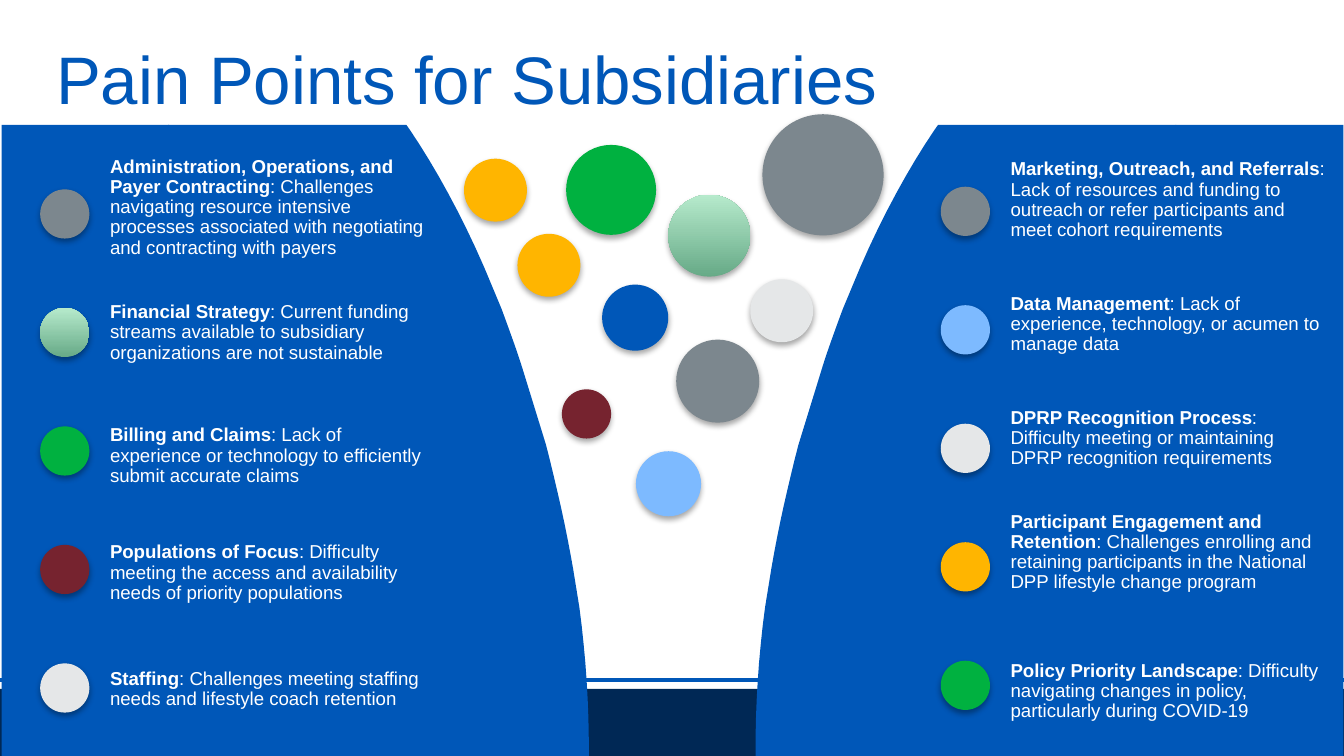
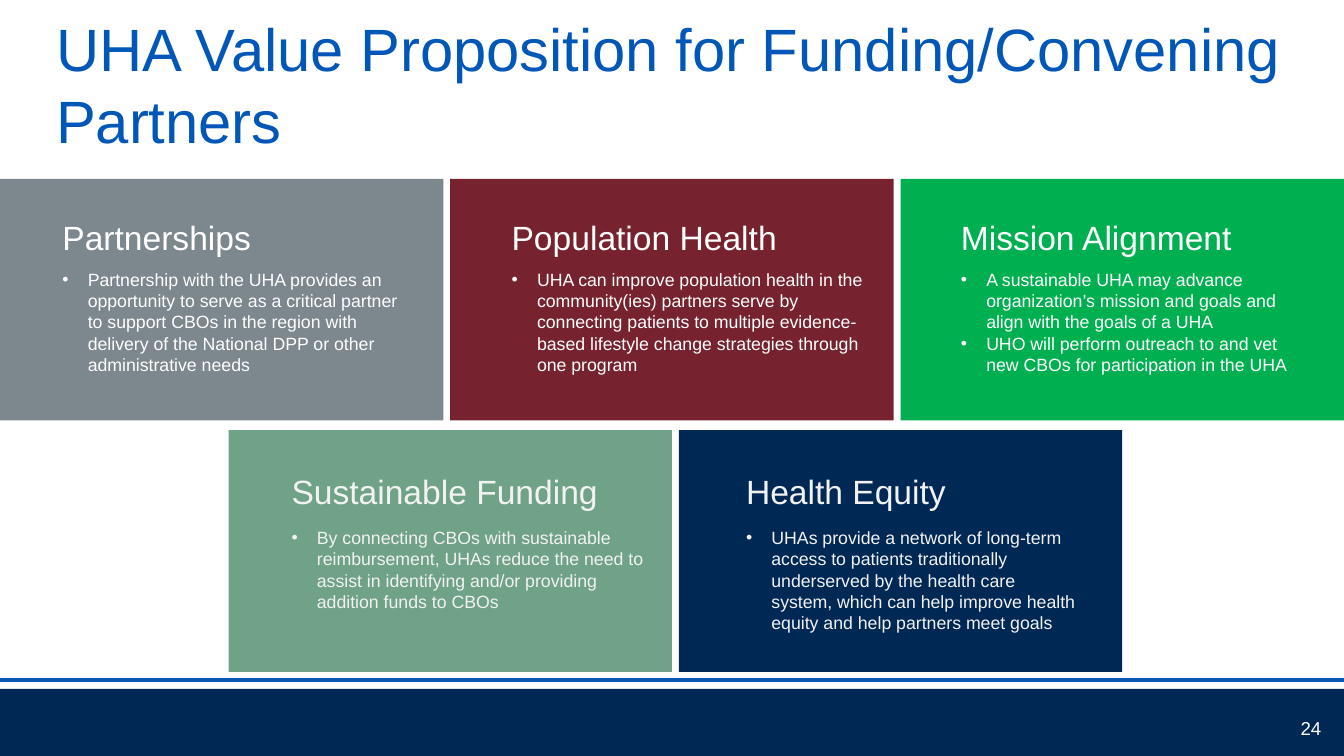
"""Build two slides: a funnel of pain points and a grid of value cards."""
from dataclasses import dataclass

from lxml import etree
from pptx import Presentation
from pptx import util as u
from pptx.dml.color import RGBColor
from pptx.enum import shapes as s, text as t
from pptx.oxml.ns import qn


@dataclass(frozen=True)
class Theme:
    """Colours, font and type sizes of the deck."""
    blue: str = "0057B8"
    navy: str = "002855"
    gray: str = "7C878E"
    wine: str = "76232F"
    green: str = "00B140"
    leaf: str = "00B050"
    sage: str = "6FA287"
    gold: str = "FFB500"
    sky: str = "7DBAFF"
    pale: str = "E5E7E8"
    white: str = "FFFFFF"
    soft: str = "F2F2F2"
    mint: tuple = ("67AA87", "B6EACC")
    font: str = "Arial"
    big: float = 36
    long: float = 32
    head: float = 18
    small: float = 10
    list: float = 9.5


T = Theme()
WIDE, HIGH = 25.4, 14.29
TOP = 2.36

LEFT = [
    (T.gray, 0.48, 5, "Administration, Operations, and Payer Contracting",
     ": Challenges navigating resource intensive processes associated with negotiating and contracting with payers"),
    (T.mint, 3.23, 3, "Financial Strategy",
     ": Current funding streams available to subsidiary organizations are not sustainable"),
    (T.green, 5.56, 3, "Billing and Claims",
     ": Lack of experience or technology to efficiently submit accurate claims"),
    (T.wine, 7.77, 3, "Populations of Focus",
     ": Difficulty meeting the access and availability needs of priority populations"),
    (T.pale, 10.16, 2, "Staffing",
     ": Challenges meeting staffing needs and lifestyle coach retention"),
]
RIGHT = [
    (T.gray, 0.58, 4, "Marketing, Outreach, and Referrals",
     ": Lack of resources and funding to outreach or refer participants and meet cohort requirements"),
    (T.sky, 3.12, 3, "Data Management",
     ": Lack of experience, technology, or acumen to manage data"),
    (T.pale, 5.28, 3, "DPRP Recognition Process",
     ": Difficulty meeting or maintaining DPRP recognition requirements"),
    (T.gold, 7.24, 4, "Participant Engagement and Retention",
     ": Challenges enrolling and retaining participants in the National DPP lifestyle change program"),
    (T.green, 10.06, 3, "Policy Priority Landscape",
     ": Difficulty navigating changes in policy, particularly during COVID-19"),
]
BALLS = [
    (6.6, 2.06, 1.19, T.gold), (7.52, 0.38, 1.7, T.green),
    (9.45, 1.32, 1.55, T.mint), (8.2, 3.02, 1.25, T.blue),
    (7.44, 5, 0.93, T.wine), (9.6, 4.06, 1.57, T.gray),
    (11, 2.92, 1.19, T.pale), (11.23, -0.2, 2.29, T.gray),
    (5.59, 0.64, 1.19, T.gold), (8.84, 6.17, 1.23, T.sky),
]
CURVES = [
    [(4.57, 0.1), (5.05, 0.81), (5.54, 1.7), (5.97, 2.69)],
    [(6.3, 3.48), (6.45, 3.89), (6.6, 4.29), (6.73, 4.72)],
    [(7.14, 6.05), (7.34, 6.83), (7.52, 7.62), (7.65, 8.38)],
    [(7.77, 9.12), (7.9, 10.08), (7.95, 11), (7.95, 11.81)],
]
UPPER = [
    (T.gray, 0.93, 7.16, "Partnerships", [
        "Partnership with the UHA provides an opportunity to serve as a critical partner to support CBOs in the region with delivery of the National DPP or other administrative needs"]),
    (T.wine, 0.91, 7.47, "Population Health", [
        "UHA can improve population health in the community(ies) partners serve by connecting patients to multiple evidence-based lifestyle change strategies through one program"]),
    (T.leaf, 0.89, 6.71, "Mission Alignment", [
        "A sustainable UHA may advance organization’s mission and goals and align with the goals of a UHA",
        "UHO will perform outreach to and vet new CBOs for participation in the UHA"]),
]
LOWER = [
    (T.sage, 0.94, 7.16, "Sustainable Funding", [
        "By connecting CBOs with sustainable reimbursement, UHAs reduce the need to assist in identifying and/or providing addition funds to CBOs"]),
    (T.navy, 1.02, 6.83, "Health Equity", [
        "UHAs provide a network of long-term access to patients traditionally underserved by the health care system, which can help improve health equity and help partners meet goals"]),
]


def cm(*nums):
    """Turn plain numbers into lengths."""
    return [u.Cm(n) for n in nums]


def paint(shape, color):
    """Fill a shape with one colour or a pair, with no line or shadow."""
    if isinstance(color, tuple):
        shape.fill.gradient()
        shape.fill.gradient_angle = 90
        for stop, tone in zip(shape.fill.gradient_stops, color):
            stop.color.rgb = RGBColor.from_string(tone)
    else:
        shape.fill.solid()
        shape.fill.fore_color.rgb = RGBColor.from_string(color)
    shape.line.fill.background()
    shape.shadow.inherit = False
    return shape


def block(slide, box, color):
    """Draw a plain rectangle."""
    return paint(slide.shapes.add_shape(s.MSO_SHAPE.RECTANGLE, *cm(*box)), color)


def ball(slide, x, y, size, color):
    """Draw a circle with a soft shadow below it."""
    dot = paint(slide.shapes.add_shape(s.MSO_SHAPE.OVAL, *cm(x, y, size, size)), color)
    glow = etree.SubElement(
        dot.element.spPr.find(qn("a:effectLst")), qn("a:outerShdw"),
        blurRad="40000", dist="23000", dir="5400000", rotWithShape="0")
    tone = etree.SubElement(glow, qn("a:srgbClr"), val="000000")
    etree.SubElement(tone, qn("a:alpha"), val="35000")


def write(frame, paras, size=T.small, color=T.white, align=t.PP_ALIGN.LEFT,
          anchor=t.MSO_ANCHOR.TOP, side=0.25, space=None, bullet=False,
          fit=t.MSO_AUTO_SIZE.NONE):
    """Write paragraphs, each a string or a list of (text, bold) runs."""
    frame.word_wrap, frame.auto_size = True, fit
    frame.vertical_anchor = anchor
    frame.margin_left = frame.margin_right = u.Cm(side)
    frame.margin_top = frame.margin_bottom = u.Cm(0.13)
    for num, runs in enumerate(paras):
        para = frame.add_paragraph() if num else frame.paragraphs[0]
        para.alignment = align
        if space:
            para.line_spacing = space
        if bullet:
            props = para._p.get_or_add_pPr()
            props.set("marL", str(u.Cm(0.48)))
            props.set("indent", str(-u.Cm(0.48)))
            etree.SubElement(props, qn("a:buFont"), typeface=T.font)
            etree.SubElement(props, qn("a:buChar"), char="•")
        for words, bold in [(runs, False)] if isinstance(runs, str) else runs:
            run = para.add_run()
            run.text = words
            run.font.name, run.font.size = T.font, u.Pt(size)
            run.font.bold = bold
            run.font.color.rgb = RGBColor.from_string(color)


def label(slide, box, paras, **form):
    """Add a text box and write in it."""
    write(slide.shapes.add_textbox(*cm(*box)).text_frame, paras, **form)


def start(deck, title, size, high):
    """Add a slide with its title, footer rule and band."""
    slide = deck.slides.add_slide(deck.slide_layouts[5])
    head = slide.shapes.title
    head.left, head.top, head.width, head.height = cm(0.81, 0.53, 23.9, high)
    write(head.text_frame, [title], size=size, color=T.blue,
          anchor=t.MSO_ANCHOR.BOTTOM)
    rule = slide.shapes.add_connector(
        s.MSO_CONNECTOR.STRAIGHT, *cm(0, 12.85, WIDE, 12.85))
    rule.line.color.rgb = RGBColor.from_string(T.blue)
    rule.line.width = u.Pt(2.25)
    etree.SubElement(rule.element.spPr, qn("a:effectLst"))
    block(slide, (0, 13.02, WIDE, 1.27), T.navy)
    return slide


def bend(ends, steps=8):
    """List points along a cubic curve."""
    for n in range(steps + 1):
        k = n / steps
        parts = ((1 - k) ** 3, 3 * k * (1 - k) ** 2, 3 * k * k * (1 - k), k ** 3)
        yield tuple(sum(p * e[a] for p, e in zip(parts, ends)) for a in (0, 1))


def funnel(slide, box):
    """Draw the two mirrored walls and the balls between them."""
    left, top, width, high = box
    edge = [(0, 0), (4.5, 0)]
    edge += [spot for ends in CURVES for spot in bend(ends)]
    edge += [(7.95, high), (0, high)]
    walls = [[cm(x, y) for x, y in edge],
             [cm(width - x, y) for x, y in edge]]
    form = slide.shapes.build_freeform(*walls[0][0])
    form.add_line_segments(walls[0][1:])
    form.move_to(*walls[1][0])
    form.add_line_segments(walls[1][1:])
    paint(form.convert_to_shape(*cm(left, top)), T.blue)
    for x, y, size, color in BALLS:
        ball(slide, left + x, top + y, size, color)


def column(slide, left, top, rows):
    """Place a column of keyed pain points."""
    for num, (color, drop, lines, head, body) in enumerate(rows):
        ball(slide, left + 0.76, top + 1.22 + 2.24 * num, 0.93, color)
        label(slide, (left + 2.08, top + drop, 5.94, 0.25 + 0.39 * lines),
              [[(head, True), (body, False)]], side=0, space=0.9,
              fit=t.MSO_AUTO_SIZE.SHAPE_TO_FIT_TEXT)


def cards(slide, left, top, rows, color, head, body):
    """Place a row of cards, with the text tops given within each card."""
    for num, (fill, pad, width, name, points) in enumerate(rows):
        x = left + 8.51 * num
        block(slide, (x, top, 8.38, 4.57), fill)
        label(slide, (x + pad, top + head, width, 2.36), [name], size=T.head,
              color=color, anchor=t.MSO_ANCHOR.MIDDLE)
        label(slide, (x + pad, top + body, width, 2.9), points, size=T.list,
              color=color, bullet=True)


def pains(deck):
    """Build the pain point slide."""
    slide = start(deck, "Pain Points for Subsidiaries", T.big, 1.83)
    for left in (0.03, 22.22):
        block(slide, (left, TOP, 3.17, HIGH - TOP), T.blue)
    funnel(slide, (3.18, TOP, 19.05, HIGH - TOP))
    column(slide, 0, TOP, LEFT)
    column(slide, 17.02, TOP - 0.05, RIGHT)


def values(deck):
    """Build the value slide."""
    slide = start(deck, "UHA Value Proposition for Funding/Convening Partners",
                  T.long, 2.54)
    label(slide, (22.86, 13.39, 2.36, 0.76), ["24"],
          align=t.PP_ALIGN.RIGHT, anchor=t.MSO_ANCHOR.MIDDLE)
    cards(slide, 0, 3.38, UPPER, T.white, -0.08, 1.57)
    cards(slide, 4.32, 8.13, LOWER, T.soft, -0.03, 1.7)


def main():
    """Build and save the deck."""
    deck = Presentation()
    deck.slide_width, deck.slide_height = cm(WIDE, HIGH)
    pains(deck)
    values(deck)
    deck.save("out.pptx")


if __name__ == "__main__":
    main()
